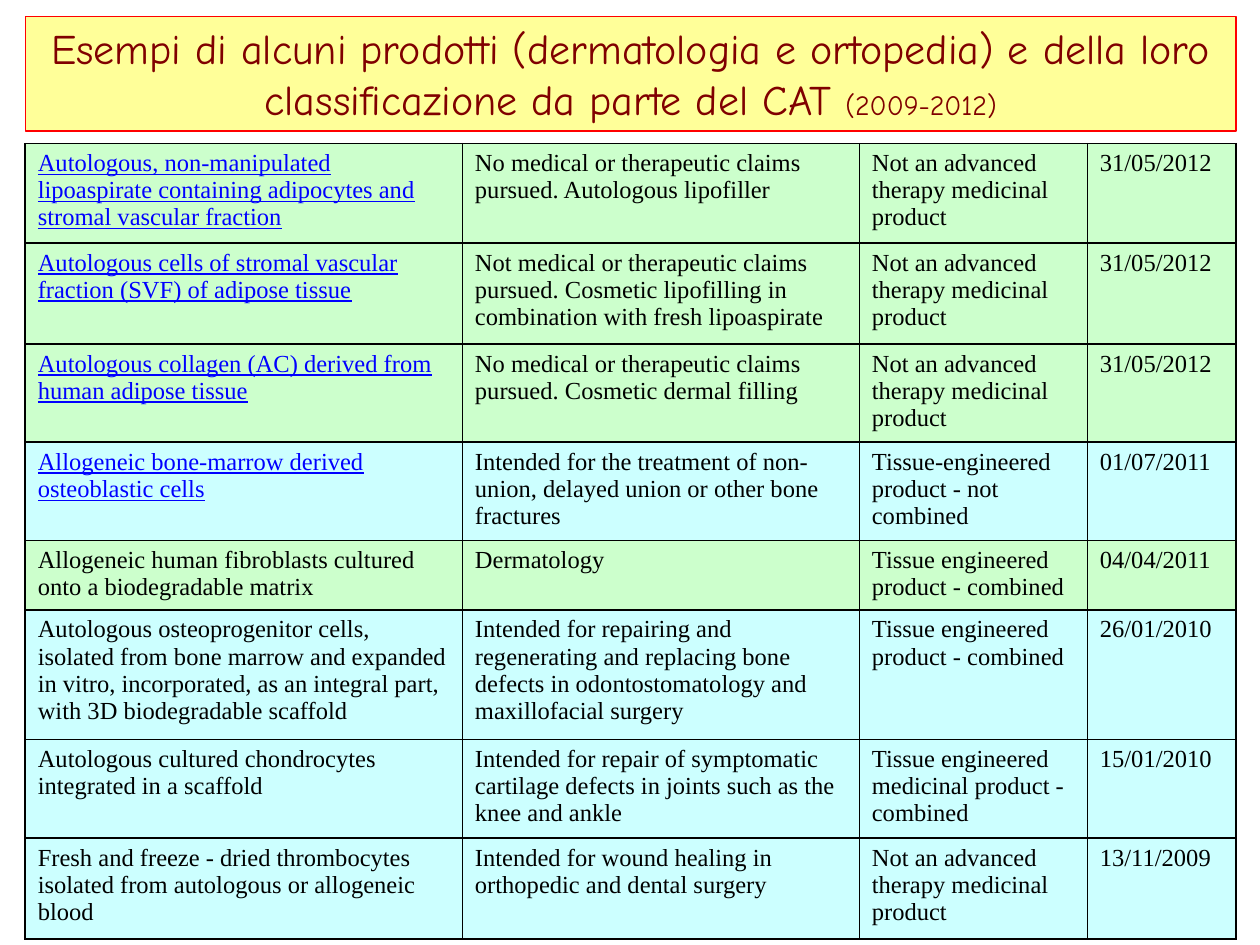
from lxml import etree
from pptx import Presentation, util as u
from pptx.dml.color import RGBColor
from pptx.enum import text
from pptx.oxml import ns

COLORS = {
    "title_fill": "FFFF99", "title_line": "FF0000", "title_text": "800000",
    "green": "CCFFCC", "cyan": "CCFFFF", "link": "0000FF", "black": "000000",
}
LEFT, WIDTH = 0.2, 9.61
COLUMNS = [3.47, 3.15, 1.81, 1.18]
NOT_ADVANCED = "Not an advanced therapy medicinal product"
COMBINED = "Tissue engineered product - combined"

# top, row height, fill, first column colour, rows
GROUPS = [
    (1.14, 0.75, "green", "link", [
        ("Autologous, non-manipulated lipoaspirate containing adipocytes and stromal vascular fraction",
         "No medical or therapeutic claims pursued. Autologous lipofiller",
         NOT_ADVANCED, "31/05/2012")]),
    (1.93, 0.74, "green", "link", [
        ("Autologous cells of stromal vascular fraction (SVF) of adipose tissue",
         "Not medical or therapeutic claims pursued. Cosmetic lipofilling in combination with fresh lipoaspirate",
         NOT_ADVANCED, "31/05/2012"),
        ("Autologous collagen (AC) derived from human adipose tissue",
         "No medical or therapeutic claims pursued. Cosmetic dermal filling",
         NOT_ADVANCED, "31/05/2012")]),
    (3.51, 0.74, "cyan", "link", [
        ("Allogeneic bone-marrow derived osteoblastic cells",
         "Intended for the treatment of non-union, delayed union or other bone fractures",
         "Tissue-engineered product - not combined", "01/07/2011")]),
    (4.29, 0.53, "green", "black", [
        ("Allogeneic human fibroblasts cultured onto a biodegradable matrix",
         "Dermatology", COMBINED, "04/04/2011")]),
    (4.84, 0.96, "cyan", "black", [
        ("Autologous osteoprogenitor cells, isolated from bone marrow and expanded in vitro, "
         "incorporated, as an integral part, with 3D biodegradable scaffold",
         "Intended for repairing and regenerating and replacing bone defects in "
         "odontostomatology and maxillofacial surgery",
         COMBINED, "26/01/2010")]),
    (5.87, 0.74, "cyan", "black", [
        ("Autologous cultured chondrocytes integrated in a scaffold",
         "Intended for repair of symptomatic cartilage defects in joints such as the knee and ankle",
         "Tissue engineered medicinal product - combined", "15/01/2010")]),
    (6.65, 0.8, "cyan", "black", [
        ("Fresh and freeze - dried thrombocytes isolated from autologous or allogeneic blood",
         "Intended for wound healing in orthopedic and dental surgery",
         NOT_ADVANCED, "13/11/2009")]),
]


def color(name):
    return RGBColor.from_string(COLORS[name])


def format_span(span, font, size, name):
    span.font.name = font
    span.font.size = u.Pt(size)
    span.font.color.rgb = color(name)


def add_borders(cell):
    properties = cell._tc.get_or_add_tcPr()
    for position, side in enumerate(("lnL", "lnR", "lnT", "lnB")):
        line = etree.Element(ns.qn("a:" + side), w=str(u.Pt(1)))
        fill = etree.SubElement(line, ns.qn("a:solidFill"))
        etree.SubElement(fill, ns.qn("a:srgbClr"), val=COLORS["black"])
        properties.insert(position, line)


def add_title(page, left, top, width, height):
    box = page.shapes.title
    box.left, box.top, box.width, box.height = map(u.Inches, (left, top, width, height))
    box.fill.solid()
    box.fill.fore_color.rgb = color("title_fill")
    box.line.color.rgb = color("title_line")
    box.line.width = u.Pt(0.75)
    frame = box.text_frame
    frame.word_wrap = True
    frame.auto_size = text.MSO_AUTO_SIZE.SHAPE_TO_FIT_TEXT
    frame.vertical_anchor = text.MSO_ANCHOR.TOP
    para = frame.paragraphs[0]
    para.alignment = text.PP_ALIGN.CENTER
    for words, size in (
        ("Esempi di alcuni prodotti (dermatologia e ortopedia) e della loro "
         "classificazione da parte del CAT ", 24),
        ("(2009-2012)", 16),
    ):
        span = para.add_run()
        span.text = words
        format_span(span, "Comic Neue", size, "title_text")


def add_products(page, left, top, width, row_height, fill, name_color, rows):
    table = page.shapes.add_table(
        len(rows), len(COLUMNS), u.Inches(left), u.Inches(top),
        u.Inches(width), u.Inches(row_height * len(rows))).table
    table.first_row = table.horz_banding = False
    for column, column_width in zip(table.columns, COLUMNS):
        column.width = u.Inches(column_width)
    for row, values in zip(table.rows, rows):
        for index, (cell, value) in enumerate(zip(row.cells, values)):
            cell.fill.solid()
            cell.fill.fore_color.rgb = color(fill)
            add_borders(cell)
            cell.text_frame.text = value
            span = cell.text_frame.paragraphs[0].runs[0]
            text_color = name_color if index == 0 else "black"
            format_span(span, "Times New Roman", 14, text_color)
            span.font.underline = text_color == "link"


def main():
    deck = Presentation()
    deck.slide_width, deck.slide_height = u.Inches(10), u.Inches(7.5)
    page = deck.slides.add_slide(deck.slide_layouts[5])
    add_title(page, LEFT, 0.13, WIDTH, 0.91)
    for top, *group in GROUPS:
        add_products(page, LEFT, top, WIDTH, *group)
    deck.save("out.pptx")


if __name__ == "__main__":
    main()
